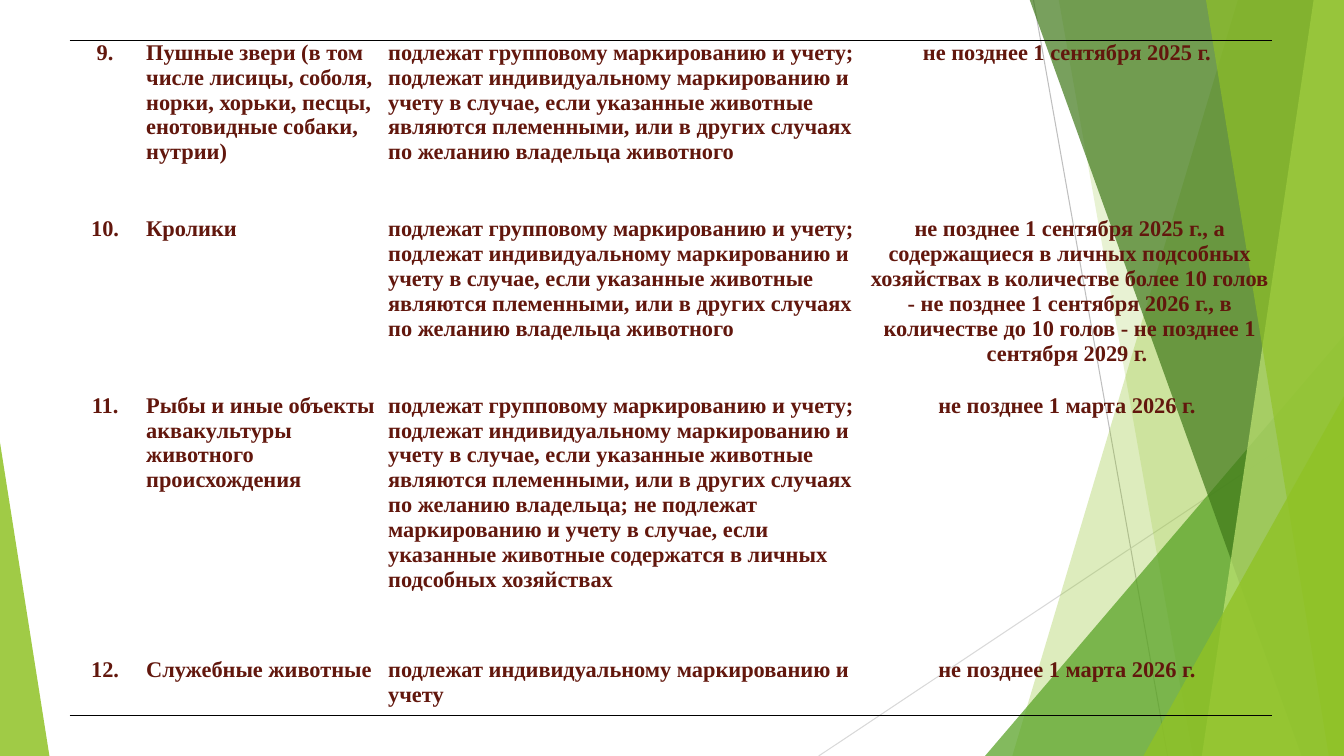
from dataclasses import dataclass

from lxml import etree
from pptx import Presentation
from pptx.dml.color import RGBColor
from pptx.enum import shapes, text
from pptx.oxml import ns
from pptx.util import Inches, Pt

WIDTH, HEIGHT, TOP = 13.33, 7.5, -0.01
COLORS = {
    "lime": "90C226",
    "green": "54A021",
    "forest": "3F7819",
    "pale": "C0E474",
    "gray": "BFBFBF",
    "light_gray": "D9D9D9",
    "text": "62170D",
    "rule": "000000",
}
NO_STYLE_NO_GRID = "{2D5ABB26-0587-4C30-8999-92F81FD0307C}"


@dataclass
class Ray:
    start: tuple[float, float]
    end: tuple[float, float]
    color: str


@dataclass
class Panel:
    top_x: float
    bottom_x: float
    color: str
    alpha: int


@dataclass
class Corner:
    left: float
    top: float
    width: float
    apex: float
    color: str
    alpha: int


@dataclass
class AnimalRow:
    number: str
    animals: str
    marking: str
    deadline: str
    height: float


RAYS = [
    Ray((10.25, 0), (11.58, HEIGHT), "gray"),
    Ray((WIDTH, 4.03), (8.12, HEIGHT), "light_gray"),
]
FACETS = [
    Panel(12.28, 10.04, "lime", 30),
    Panel(10.5, 11.83, "lime", 20),
    Corner(9.77, 3.33, 3.56, 1, "green", 72),
    Panel(10.21, 12.91, "forest", 70),
    Panel(13.03, 11.92, "pale", 70),
    Panel(11.96, 13.18, "lime", 65),
    Corner(11.34, 3.93, 1.99, 1, "lime", 80),
    Corner(0, 4.39, 0.49, 0, "lime", 85),
]

GROUP_MARKING = (
    "подлежат групповому маркированию и учету; подлежат индивидуальному "
    "маркированию и учету в случае, если указанные животные являются "
    "племенными, или в других случаях по желанию владельца"
)
ROWS = [
    AnimalRow(
        "9. ",
        "Пушные звери (в том числе лисицы, соболя, норки, хорьки, песцы, "
        "енотовидные собаки, нутрии)",
        GROUP_MARKING + " животного",
        "не позднее 1 сентября 2025 г. ",
        1.75,
    ),
    AnimalRow(
        "10. ",
        "Кролики",
        GROUP_MARKING + " животного",
        "не позднее 1 сентября 2025 г., а содержащиеся в личных подсобных "
        "хозяйствах в количестве более 10 голов - не позднее 1 сентября "
        "2026 г., в количестве до 10 голов - не позднее 1 сентября 2029 г. ",
        1.75,
    ),
    AnimalRow(
        "11. ",
        "Рыбы и иные объекты аквакультуры животного происхождения",
        GROUP_MARKING + "; не подлежат маркированию и учету в случае, если "
        "указанные животные содержатся в личных подсобных хозяйствах",
        "не позднее 1 марта 2026 г. ",
        2.62,
    ),
    AnimalRow(
        "12. ",
        "Служебные животные",
        "подлежат индивидуальному маркированию и учету",
        "не позднее 1 марта 2026 г. ",
        0.58,
    ),
]
COLUMNS = [0.76, 2.4, 4.75, 4.02]
ALIGNS = [text.PP_ALIGN.CENTER, text.PP_ALIGN.LEFT, text.PP_ALIGN.LEFT, text.PP_ALIGN.CENTER]


def rgb(name: str) -> RGBColor:
    return RGBColor.from_string(COLORS[name])


def draw_ray(s, ray: Ray) -> None:
    points = [Inches(v) for v in ray.start + ray.end]
    line = s.shapes.add_connector(shapes.MSO_CONNECTOR.STRAIGHT, *points)
    line.line.color.rgb = rgb(ray.color)
    line.line.width = Pt(0.75)
    etree.SubElement(line.element.spPr, ns.qn("a:effectLst"))


def draw_facet(s, facet: Panel | Corner) -> None:
    if isinstance(facet, Panel):
        outline = [(WIDTH, TOP), (WIDTH, HEIGHT), (facet.bottom_x, HEIGHT)]
        builder = s.shapes.build_freeform(Inches(facet.top_x), Inches(TOP))
        builder.add_line_segments([(Inches(x), Inches(y)) for x, y in outline])
        sp = builder.convert_to_shape()
    else:
        sp = s.shapes.add_shape(
            shapes.MSO_SHAPE.ISOSCELES_TRIANGLE,
            Inches(facet.left), Inches(facet.top),
            Inches(facet.width), Inches(HEIGHT - facet.top),
        )
        sp.adjustments[0] = facet.apex
    sp.shadow.inherit = False
    sp.fill.solid()
    sp.fill.fore_color.rgb = rgb(facet.color)
    color = sp.element.spPr.find(".//" + ns.qn("a:srgbClr"))
    etree.SubElement(color, ns.qn("a:alpha"), val=str(facet.alpha * 1000))
    sp.line.fill.background()


def add_border(cell, side: str) -> None:
    tc_pr = cell._tc.get_or_add_tcPr()
    border = etree.Element(ns.qn(f"a:{side}"), w=str(Pt(0.75)))
    fill = etree.SubElement(border, ns.qn("a:solidFill"))
    etree.SubElement(fill, ns.qn("a:srgbClr"), val=COLORS["rule"])
    tc_pr.insert(0, border)


def fill_cell(cell, content: str, align: text.PP_ALIGN) -> None:
    cell.margin_left = cell.margin_right = cell.margin_top = cell.margin_bottom = 0
    cell.fill.background()
    p = cell.text_frame.paragraphs[0]
    p.alignment = align
    r = p.add_run()
    r.text = content
    r.font.name = "Times New Roman"
    r.font.size = Pt(16)
    r.font.bold = True
    r.font.color.rgb = rgb("text")


def draw_table(s, rows: list[AnimalRow]) -> None:
    frame = s.shapes.add_table(
        len(rows), len(COLUMNS), Inches(0.69), Inches(0.4),
        Inches(sum(COLUMNS)), Inches(sum(row.height for row in rows)),
    )
    table = frame.table
    table.first_row = table.horz_banding = False
    frame.element.find(".//" + ns.qn("a:tableStyleId")).text = NO_STYLE_NO_GRID
    for column, width in zip(table.columns, COLUMNS):
        column.width = Inches(width)
    for i, row in enumerate(rows):
        table.rows[i].height = Inches(row.height)
        contents = [row.number, row.animals, row.marking, row.deadline]
        for j, content in enumerate(contents):
            fill_cell(table.cell(i, j), content, ALIGNS[j])
    for j in range(len(COLUMNS)):
        add_border(table.cell(0, j), "lnT")
        add_border(table.cell(len(rows) - 1, j), "lnB")


def main() -> None:
    prs = Presentation()
    prs.slide_width, prs.slide_height = Inches(WIDTH), Inches(HEIGHT)
    s = prs.slides.add_slide(prs.slide_layouts[6])
    for ray in RAYS:
        draw_ray(s, ray)
    for facet in FACETS:
        draw_facet(s, facet)
    draw_table(s, ROWS)
    prs.save("out.pptx")


if __name__ == "__main__":
    main()
